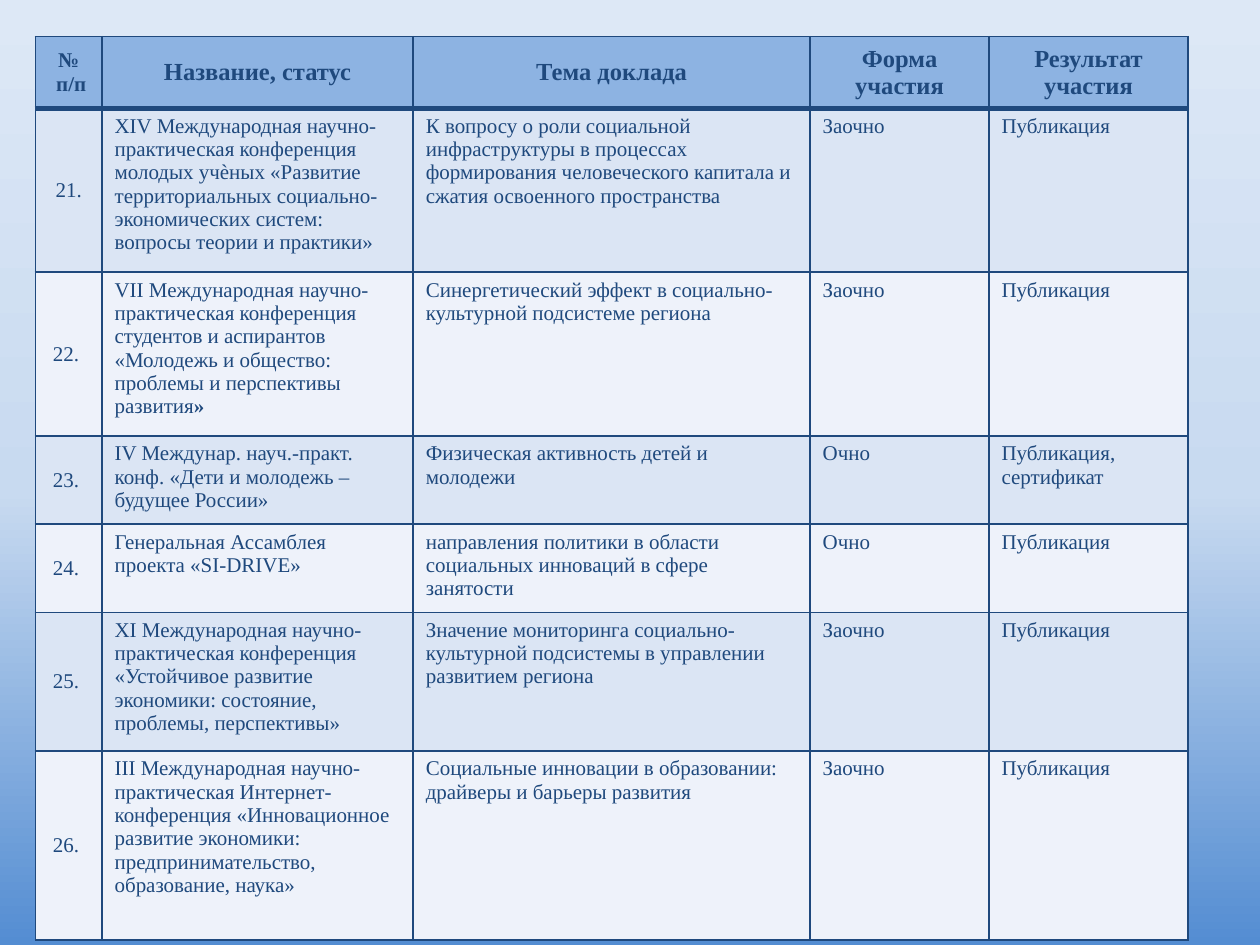
from copy import deepcopy

from pptx import Presentation
from pptx.dml.color import RGBColor
from pptx.enum.text import MSO_ANCHOR as Anchor, PP_ALIGN as Align
from pptx.oxml.ns import qn
from pptx.util import Inches, Pt
from lxml.etree import SubElement

NAVY = RGBColor(0x1F, 0x49, 0x7D)
HEADER = RGBColor(0x8D, 0xB3, 0xE2)
BANDS = (RGBColor(0xDB, 0xE5, 0xF4), RGBColor(0xEE, 0xF2, 0xFA))
BACKDROP = {
    0: RGBColor(0x54, 0x8D, 0xD2),
    0.48: RGBColor(0xC8, 0xDA, 0xF0),
    1: RGBColor(0xDD, 0xE8, 0xF6),
}

COLUMNS = (0.53, 2.47, 3.15, 1.42, 1.58)
HEIGHTS = (0.57, 1.3, 1.3, 0.7, 0.7, 1.1, 1.5)
HEADINGS = ("№\n п/п", "Название, статус", "Тема доклада", "Форма участия", "Результат участия")
REPORTS = (
    ("21.",
     "XIV Международная научно-практическая конференция молодых учѐных «Развитие "
     "территориальных социально-экономических систем: вопросы теории и практики»",
     "К вопросу о роли социальной инфраструктуры в процессах формирования "
     "человеческого капитала и сжатия освоенного пространства",
     "Заочно", "Публикация"),
    ("22. ",
     ("VII Международная научно-практическая конференция студентов и аспирантов "
      "«Молодежь и общество: проблемы и перспективы развития", "»"),
     "Синергетический эффект в социально-культурной подсистеме региона",
     "Заочно", "Публикация"),
    ("23. ",
     "IV Междунар. науч.-практ. конф. «Дети и молодежь – будущее России»",
     "Физическая активность детей и молодежи",
     "Очно", "Публикация, сертификат"),
    ("24. ",
     "Генеральная Ассамблея проекта «SI-DRIVE»",
     "направления политики в области социальных инноваций в сфере занятости",
     "Очно", "Публикация"),
    ("25. ",
     "XI Международная научно-практическая конференция «Устойчивое развитие "
     "экономики: состояние, проблемы, перспективы»",
     "Значение мониторинга социально-культурной подсистемы в управлении развитием региона",
     "Заочно", "Публикация"),
    ("26. ",
     "III Международная научно-практическая Интернет-конференция «Инновационное "
     "развитие экономики: предпринимательство, образование, наука»",
     "Социальные инновации в образовании: драйверы и барьеры развития",
     "Заочно", "Публикация"),
)


class PageBuilder:
    def __init__(self, page):
        self.page = page
        self.font = {"name": "Times New Roman", "size": Pt(12), "bold": False}

    def backdrop(self, colours, angle):
        fill = self.page.background.fill
        fill.gradient()
        fill.gradient_angle = angle
        stop_list = self.page.element.find(".//" + qn("a:gsLst"))
        stop_list.append(deepcopy(stop_list[0]))
        for stop, (position, colour) in zip(fill.gradient_stops, colours.items()):
            stop.position = position
            stop.color.rgb = colour

    def span(self, para, text, **changes):
        span = para.add_run()
        span.text = text
        for name, value in {**self.font, **changes}.items():
            setattr(span.font, name, value)
        span.font.color.rgb = NAVY

    def borders(self, cell, **widths):
        properties = cell._tc.get_or_add_tcPr()
        for side in "LRTB":
            line = SubElement(properties, qn(f"a:ln{side}"), w=str(Pt(widths.get(side, 1))))
            paint = SubElement(line, qn("a:solidFill"))
            SubElement(paint, qn("a:srgbClr"), val=str(NAVY))

    def cell(self, cell, content, fill, centred, **changes):
        spans = (content,) if isinstance(content, str) else content
        frame = cell.text_frame
        for index, line in enumerate(spans[0].split("\n")):
            para = frame.add_paragraph() if index else frame.paragraphs[0]
            para.alignment = Align.CENTER if centred else Align.LEFT
            self.span(para, line, **changes)
        for ending in spans[1:]:
            self.span(para, ending, bold=True)
        cell.vertical_anchor = Anchor.MIDDLE if centred else Anchor.TOP
        cell.fill.solid()
        cell.fill.fore_color.rgb = fill

    def table(self, left, top, columns, heights, headings, records):
        table = self.page.shapes.add_table(
            len(heights), len(columns), Inches(left), Inches(top),
            Inches(sum(columns)), Inches(sum(heights))).table
        table.first_row = table.horz_banding = False
        for column, width in zip(table.columns, columns):
            column.width = Inches(width)
        for row, height in zip(table.rows, heights):
            row.height = Inches(height)
        for index, heading in enumerate(headings):
            cell = table.cell(0, index)
            self.borders(cell, B=3)
            self.cell(cell, heading, HEADER, True, bold=True, size=Pt(14 if index else 12))
        for number, record in enumerate(records, 1):
            for index, content in enumerate(record):
                cell = table.cell(number, index)
                self.borders(cell, T=3 if number == 1 else 1)
                self.cell(cell, content, BANDS[(number - 1) % 2], index == 0)


def main():
    deck = Presentation()
    deck.slide_width, deck.slide_height = Inches(10), Inches(7.5)
    builder = PageBuilder(deck.slides.add_slide(deck.slide_layouts[6]))
    builder.backdrop(BACKDROP, 90)
    builder.table(0.28, 0.29, COLUMNS, HEIGHTS, HEADINGS, REPORTS)
    deck.save("out.pptx")


if __name__ == "__main__":
    main()
